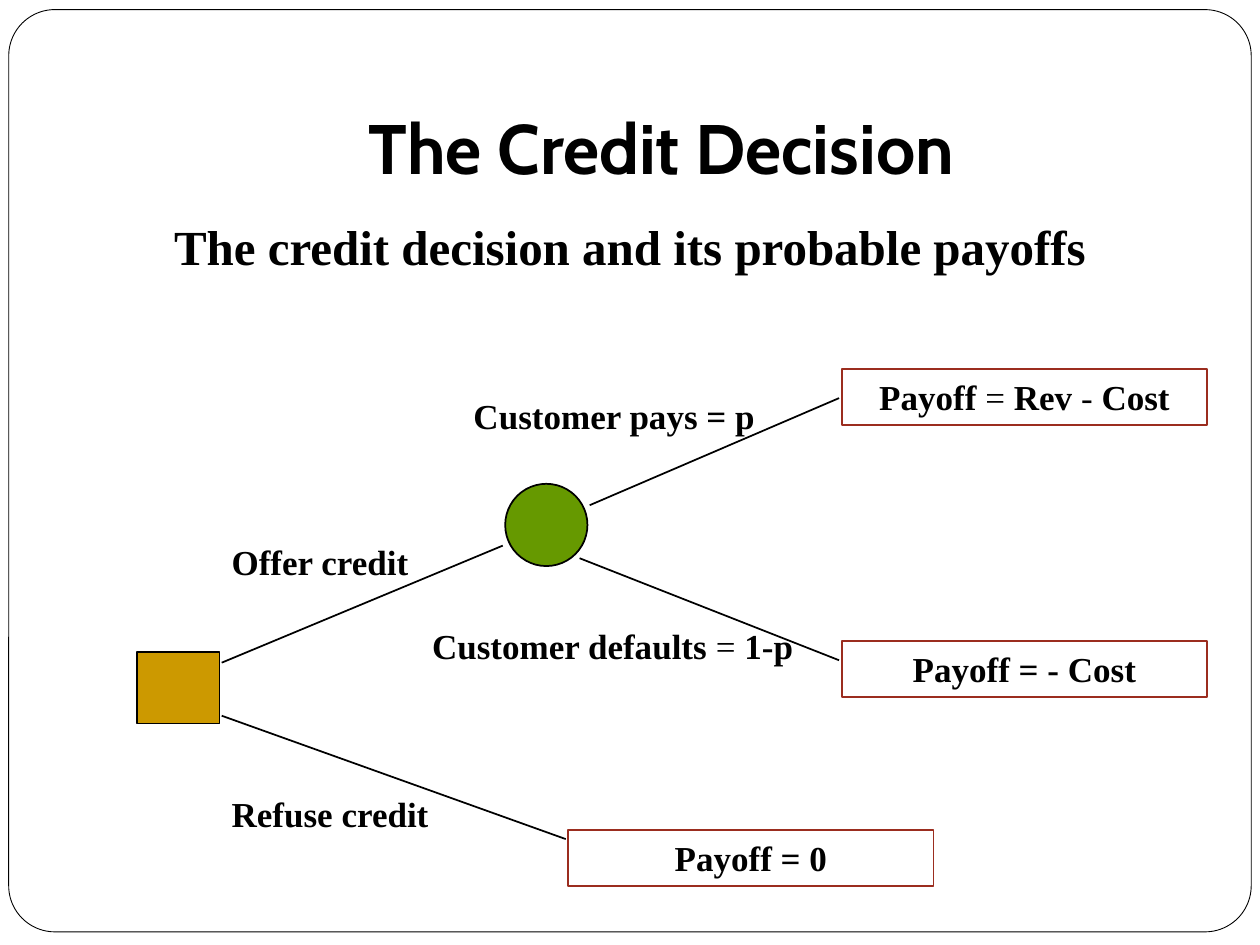
"""Build a slide with a decision tree for granting credit."""
from lxml import etree
from pptx import Presentation
from pptx import util as u
from pptx.dml.color import RGBColor
from pptx.enum import shapes, text
from pptx.oxml import ns

BLACK = RGBColor(0x00, 0x00, 0x00)
WHITE = RGBColor(0xFF, 0xFF, 0xFF)
GOLD = RGBColor(0xCC, 0x99, 0x00)
GREEN = RGBColor(0x66, 0x99, 0x00)
BRICK = RGBColor(0x9B, 0x2D, 0x1F)

LABELS = [
    (125.3, 449.3, 204.5, ["Refuse credit"]),
    (125.3, 305.3, 204.5, ["Offer credit"]),
    (263.5, 221.8, 204.5, ["Customer pays = p"]),
    (239.8, 353.5, 234.7, ["Customer defaults", " = ", "1-p"]),
]
PAYOFFS = [
    (481, 211, ["Payoff", " = ", "Rev", " - ", "Cost"]),
    (481, 366.5, ["Payoff = - Cost"]),
    (324.7, 474.5, ["Payoff = 0"]),
]
BRANCHES = [
    (126.7, 378.7, 287.3, 311.8),
    (126.7, 409, 323.3, 479.5),
    (337, 288.7, 479.5, 227.5),
    (331.2, 319, 479.5, 377.3),
]


class TreeSlide:
    """Hold the style and the current slide."""

    title_font = "Cabin"
    body_font = "Times New Roman"
    left = text.PP_ALIGN.LEFT
    center = text.PP_ALIGN.CENTER

    def __init__(self, page):
        self.page = page

    def add_spans(self, box, parts, size, font, align, anchor=text.MSO_ANCHOR.TOP):
        """Fill a box with runs that alternate between bold and regular."""
        frame = box.text_frame
        frame.word_wrap = True
        frame.auto_size = text.MSO_AUTO_SIZE.NONE
        frame.vertical_anchor = anchor
        frame.margin_left = frame.margin_right = u.Pt(7.2)
        frame.margin_top = frame.margin_bottom = u.Pt(3.6)
        para = frame.paragraphs[0]
        para.alignment = align
        for index, part in enumerate(parts):
            span = para.add_run()
            span.text = part
            span.font.name = font
            span.font.size = u.Pt(size)
            span.font.bold = index % 2 == 0
            span.font.color.rgb = BLACK
        return para

    def title(self, x, y, width, height, words):
        """Move and format the title placeholder."""
        box = self.page.shapes.title
        box.left, box.top = u.Pt(x), u.Pt(y)
        box.width, box.height = u.Pt(width), u.Pt(height)
        self.add_spans(box, [words], 40, self.title_font, self.center,
                       text.MSO_ANCHOR.BOTTOM)

    def label(self, x, y, width, height, parts, size=20, align=left):
        """Add a text box and return its paragraph."""
        box = self.page.shapes.add_textbox(
            u.Pt(x), u.Pt(y), u.Pt(width), u.Pt(height))
        return self.add_spans(box, parts, size, self.body_font, align)

    def shape(self, kind, x, y, width, height, fill=None, line=BLACK, weight=1):
        """Add an outlined preset shape."""
        box = self.page.shapes.add_shape(
            kind, u.Pt(x), u.Pt(y), u.Pt(width), u.Pt(height))
        box.shadow.inherit = False
        if fill is None:
            box.fill.background()
        else:
            box.fill.solid()
            box.fill.fore_color.rgb = fill
        box.line.color.rgb = line
        box.line.width = u.Pt(weight)
        return box

    def border(self, x, y, width, height):
        """Add the rounded page border behind the title."""
        outline = self.shape(shapes.MSO_SHAPE.ROUNDED_RECTANGLE,
                             x, y, width, height, WHITE, weight=0.5)
        outline.adjustments[0] = 0.05
        self.page.shapes.title.element.addprevious(outline.element)

    def payoff(self, x, y, parts):
        """Add an outcome box."""
        box = self.shape(shapes.MSO_SHAPE.RECTANGLE, x, y, 208.8, 32, line=BRICK)
        self.add_spans(box, parts, 20, self.body_font, self.center)

    def branch(self, x1, y1, x2, y2):
        """Add a straight line between two nodes."""
        line = self.page.shapes.add_connector(
            shapes.MSO_CONNECTOR.STRAIGHT,
            u.Pt(x1), u.Pt(y1), u.Pt(x2), u.Pt(y2))
        line.line.color.rgb = BLACK
        line.line.width = u.Pt(1)
        etree.SubElement(line.element.spPr, ns.qn("a:effectLst"))


def main():
    """Draw the decision tree and save the deck."""
    deck = Presentation()
    deck.slide_width, deck.slide_height = u.Pt(720), u.Pt(540)
    tree = TreeSlide(deck.slides.add_slide(deck.slide_layouts[5]))
    tree.border(5, 5.5, 710, 527)
    tree.title(72, 21.6, 612, 90, "The Credit Decision")
    subtitle = tree.label(0, 120, 720, 48,
                          ["The credit decision and its probable payoffs"],
                          size=28, align=tree.center)
    subtitle.space_before = u.Pt(5.8)
    tree.shape(shapes.MSO_SHAPE.RECTANGLE, 78.5, 372.5, 47, 41, GOLD)
    tree.shape(shapes.MSO_SHAPE.OVAL, 288.7, 276.5, 47, 47, GREEN)
    for ends in BRANCHES:
        tree.branch(*ends)
    for x, y, width, parts in LABELS:
        tree.label(x, y, width, 31.5, parts)
    for outcome in PAYOFFS:
        tree.payoff(*outcome)
    deck.save("out.pptx")


if __name__ == "__main__":
    main()
